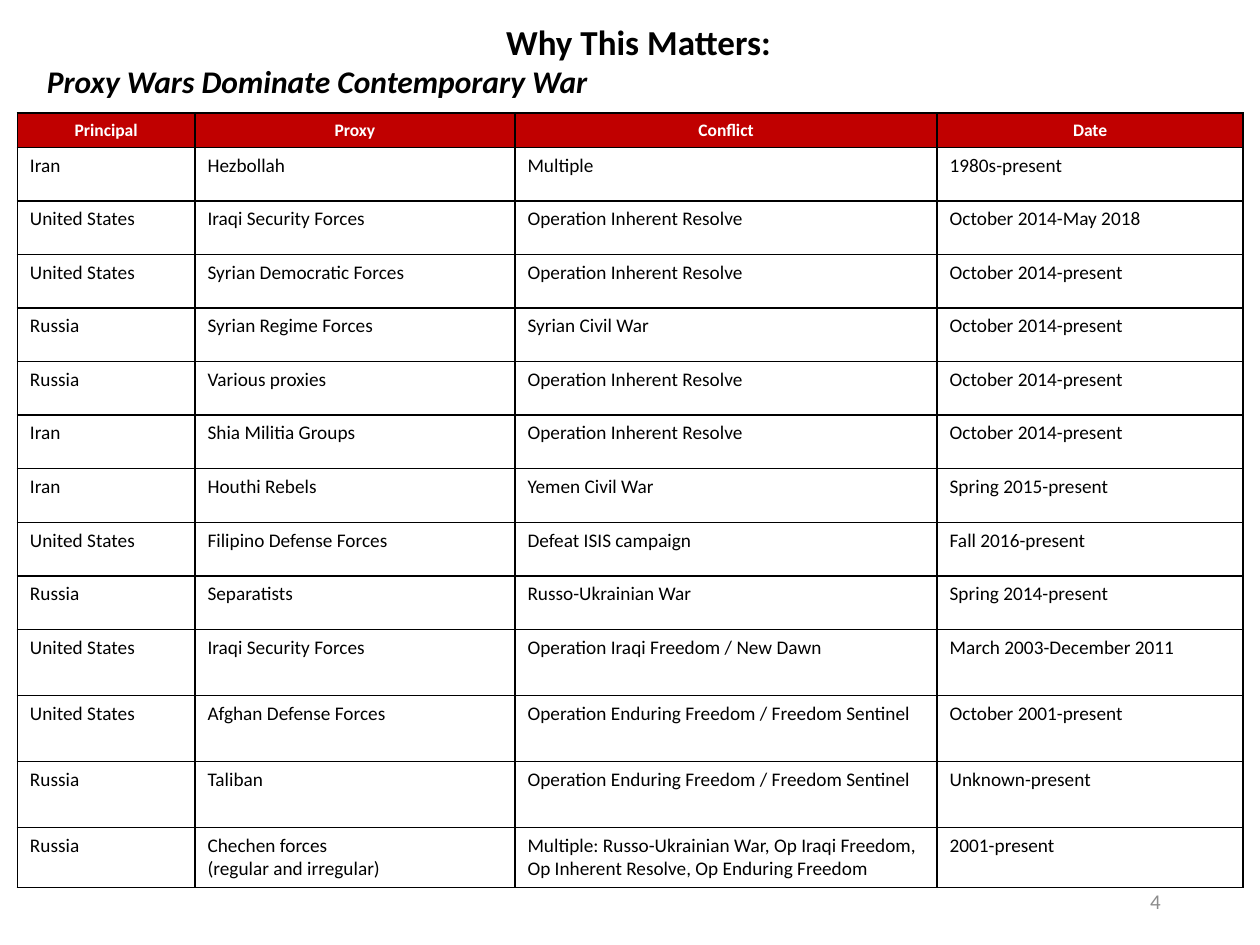
from dataclasses import dataclass

from lxml import etree
from pptx import Presentation
from pptx.dml.color import RGBColor
from pptx.enum import text
from pptx.oxml import ns
from pptx.util import Cm, Pt


@dataclass(frozen=True)
class Theme:
    font: str = "Calibri"
    black: str = "000000"
    white: str = "FFFFFF"
    red: str = "C00000"
    grey: str = "8C8C8C"
    title: int = 20
    subtitle: int = 18
    number: int = 12
    body: int = 11
    header: int = 10
    border: int = 1


THEME = Theme()
LEFT, CENTER, RIGHT = text.PP_ALIGN.LEFT, text.PP_ALIGN.CENTER, text.PP_ALIGN.RIGHT
TOP, MIDDLE = text.MSO_ANCHOR.TOP, text.MSO_ANCHOR.MIDDLE

COLUMN_WIDTHS = [3.58, 6.45, 8.51, 6.17]
ROW_HEIGHTS = [0.69] + [1.08] * 9 + [1.33] * 3 + [1.21]

INHERENT_RESOLVE = "Operation Inherent Resolve"
ENDURING_FREEDOM = "Operation Enduring Freedom / Freedom Sentinel"
SINCE_OCTOBER_2014 = "October 2014-present"

HEADINGS = ("Principal", "Proxy", "Conflict", "Date")
WARS = [
    ("Iran", "Hezbollah", "Multiple", "1980s-present"),
    ("United States", "Iraqi Security Forces", INHERENT_RESOLVE, "October 2014-May 2018"),
    ("United States", "Syrian Democratic Forces", INHERENT_RESOLVE, SINCE_OCTOBER_2014),
    ("Russia", "Syrian Regime Forces", "Syrian Civil War", SINCE_OCTOBER_2014),
    ("Russia", "Various proxies", INHERENT_RESOLVE, SINCE_OCTOBER_2014),
    ("Iran", "Shia Militia Groups", INHERENT_RESOLVE, SINCE_OCTOBER_2014),
    ("Iran", "Houthi Rebels", "Yemen Civil War", "Spring 2015-present"),
    ("United States", "Filipino Defense Forces", "Defeat ISIS campaign", "Fall 2016-present"),
    ("Russia", "Separatists", "Russo-Ukrainian War", "Spring 2014-present"),
    ("United States", "Iraqi Security Forces", "Operation Iraqi Freedom / New Dawn",
     "March 2003-December 2011"),
    ("United States", "Afghan Defense Forces", ENDURING_FREEDOM, "October 2001-present"),
    ("Russia", "Taliban", ENDURING_FREEDOM, "Unknown-present"),
    ("Russia", "Chechen forces\n(regular and irregular)",
     "Multiple: Russo-Ukrainian War, Op Iraqi Freedom, "
     "Op Inherent Resolve, Op Enduring Freedom", "2001-present"),
]


def write(paragraph, words, *, size, color=THEME.black, bold=False, italic=False, align=LEFT):
    paragraph.alignment = align
    run = paragraph.add_run()
    run.text = words
    font = run.font
    font.name, font.size = THEME.font, Pt(size)
    font.bold, font.italic = bold, italic
    font.color.rgb = RGBColor.from_string(color)


def add_title(slide):
    title = slide.shapes.title
    title.left, title.top, title.width, title.height = Cm(0.69), Cm(0.18), Cm(24.36), Cm(2.06)
    frame = title.text_frame
    frame.auto_size = text.MSO_AUTO_SIZE.NONE
    frame.vertical_anchor = MIDDLE
    write(frame.paragraphs[0], "Why This Matters:",
          size=THEME.title, bold=True, align=CENTER)
    write(frame.add_paragraph(), "Proxy Wars Dominate Contemporary War",
          size=THEME.subtitle, bold=True, italic=True)


def set_borders(cell):
    properties = cell._tc.get_or_add_tcPr()
    for position, side in enumerate(("lnL", "lnR", "lnT", "lnB")):
        line = etree.Element(ns.qn(f"a:{side}"), w=str(Pt(THEME.border)))
        fill = etree.SubElement(line, ns.qn("a:solidFill"))
        etree.SubElement(fill, ns.qn("a:srgbClr"), val=THEME.black)
        properties.insert(position, line)


def fill_cell(cell, words, *, fill, anchor, **text_format):
    cell.fill.solid()
    cell.fill.fore_color.rgb = RGBColor.from_string(fill)
    cell.vertical_anchor = anchor
    set_borders(cell)
    frame = cell.text_frame
    for index, line in enumerate(words.split("\n")):
        paragraph = frame.add_paragraph() if index else frame.paragraphs[0]
        write(paragraph, line, **text_format)


def add_war_table(slide):
    table = slide.shapes.add_table(
        len(ROW_HEIGHTS), len(COLUMN_WIDTHS), Cm(0.35), Cm(2.28),
        Cm(sum(COLUMN_WIDTHS)), Cm(sum(ROW_HEIGHTS))).table
    table.horz_banding = False
    for column, width in zip(table.columns, COLUMN_WIDTHS):
        column.width = Cm(width)
    for row, height in zip(table.rows, ROW_HEIGHTS):
        row.height = Cm(height)

    header_format = dict(fill=THEME.red, anchor=MIDDLE, size=THEME.header,
                         color=THEME.white, bold=True, align=CENTER)
    body_format = dict(fill=THEME.white, anchor=TOP, size=THEME.body)
    for row_index, values in enumerate([HEADINGS, *WARS]):
        cell_format = body_format if row_index else header_format
        for cell, words in zip(table.rows[row_index].cells, values):
            fill_cell(cell, words, **cell_format)


def add_slide_number(slide):
    box = slide.shapes.add_textbox(Cm(17.93), Cm(17.65), Cm(5.72), Cm(1.02))
    frame = box.text_frame
    frame.word_wrap = True
    frame.vertical_anchor = MIDDLE
    write(frame.paragraphs[0], "4", size=THEME.number, color=THEME.grey, align=RIGHT)


def main():
    presentation = Presentation()
    presentation.slide_width, presentation.slide_height = Cm(25.4), Cm(19.05)
    slide = presentation.slides.add_slide(presentation.slide_layouts.get_by_name("Title Only"))
    add_war_table(slide)
    add_title(slide)
    add_slide_number(slide)
    presentation.save("out.pptx")


if __name__ == "__main__":
    main()
